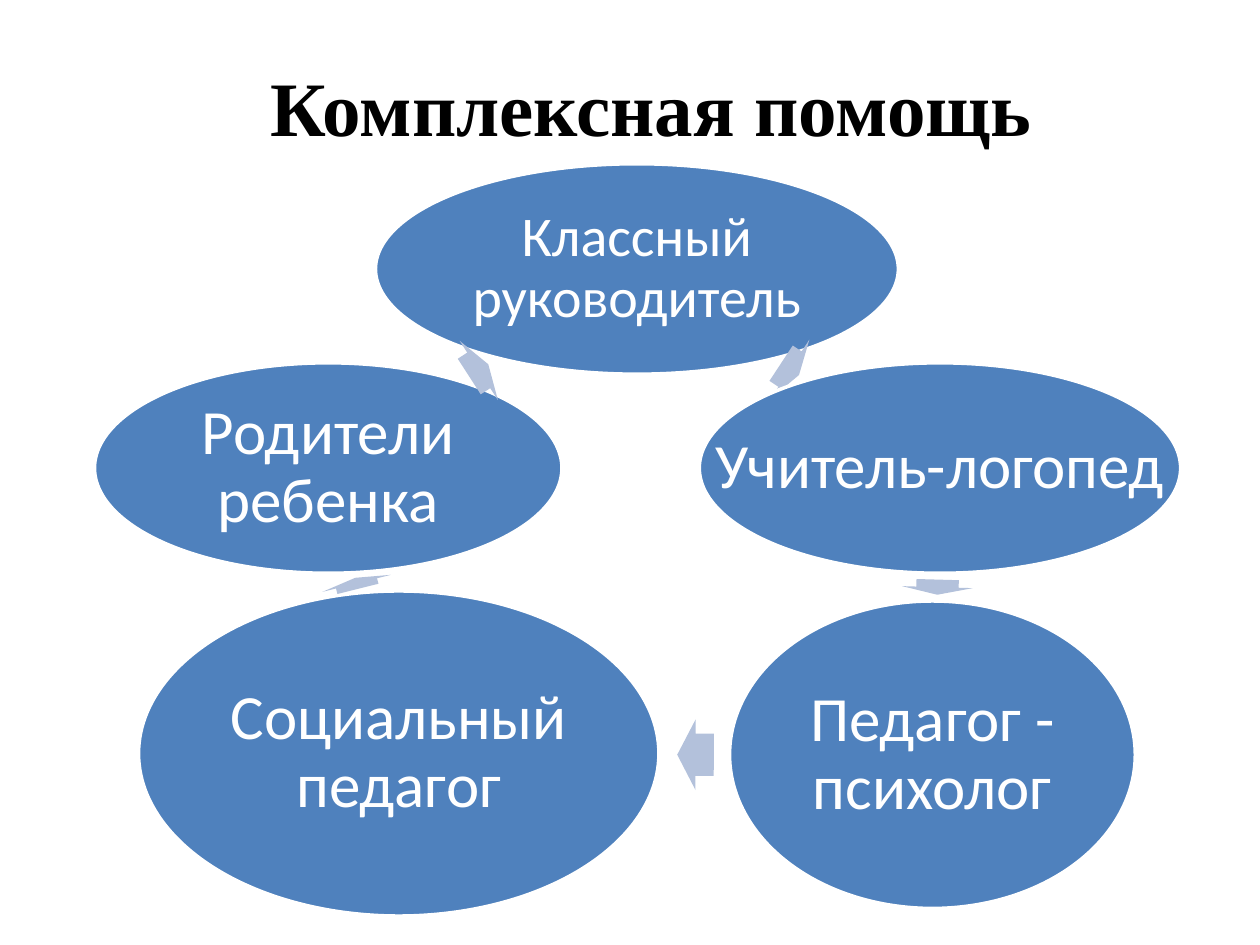
from pptx import Presentation
from pptx.dml.color import RGBColor
from pptx.enum.shapes import MSO_SHAPE
from pptx.enum.text import MSO_ANCHOR, PP_ALIGN
from pptx.util import Inches, Pt

OVAL, ARROW = MSO_SHAPE.OVAL, MSO_SHAPE.RIGHT_ARROW
MIDDLE, CENTER = MSO_ANCHOR.MIDDLE, PP_ALIGN.CENTER


def color(code):
    return RGBColor.from_string(code)


def add_text(slide, box, text, pad, space, style, code):
    frame = slide.shapes.add_textbox(*map(Inches, box)).text_frame
    form = {"word_wrap": True, "vertical_anchor": MIDDLE}
    for side in ("left", "right", "top", "bottom"):
        form["margin_" + side] = Inches(pad)
    for name, value in form.items():
        setattr(frame, name, value)
    para = frame.paragraphs[0]
    para.alignment, para.line_spacing = CENTER, space
    run = para.add_run()
    run.text = text
    for name, value in style.items():
        setattr(run.font, name, value)
    run.font.color.rgb = color(code)


deck = Presentation()
deck.slide_width, deck.slide_height = Inches(10), Inches(7.5)
slide = deck.slides.add_slide(deck.slide_layouts[6])

# Title
add_text(slide, (0.67, 0.21, 9, 1.25), "Комплексная помощь", 0.05, 1.0,
         {"name": "Times New Roman", "size": Pt(44), "bold": True}, "000000")

# Cycle, clockwise: label, text size, oval box, then the arrow that follows:
# centre x, centre y, length, rotation
steps = [
    ("Классный руководитель", 32, (2.98, 1.3, 4.15, 1.67),
     (6.27, 2.93, 0.17, 33.3)),
    ("Учитель-логопед", 36, (5.55, 2.88, 3.82, 1.67),
     (7.44, 4.66, 0.12, 91.6)),
    ("Педагог - психолог", 36, (5.79, 4.77, 3.22, 2.44),
     (5.52, 5.99, 0.29, 180.1)),
    ("Социальный педагог", 36, (1.1, 4.69, 4.13, 2.58),
     (2.83, 4.63, 0.09, 256)),
    ("Родители ребенка", 36, (0.75, 2.88, 3.71, 1.67),
     (3.8, 2.94, 0.18, 327.1)),
]
tall = 0.56

for label, size, box, (mid_x, mid_y, length, turn) in steps:
    # Oval with its label
    oval = slide.shapes.add_shape(OVAL, *map(Inches, box))
    oval.shadow.inherit = False
    oval.fill.solid()
    oval.fill.fore_color.rgb = color("4F81BD")
    oval.line.color.rgb = color("FFFFFF")
    oval.line.width = Pt(2)
    add_text(slide, box, label, 0.05, 0.9,
             {"name": "Calibri", "size": Pt(size)}, "FFFFFF")

    # Arrow to the next oval
    arrow = slide.shapes.add_shape(
        ARROW, Inches(mid_x - length / 2), Inches(mid_y - tall / 2),
        Inches(length), Inches(tall))
    arrow.shadow.inherit = False
    arrow.adjustments[0], arrow.adjustments[1] = 0.6, 0.5
    arrow.rotation = turn
    arrow.fill.solid()
    arrow.fill.fore_color.rgb = color("B3C1DB")
    arrow.line.fill.background()

deck.save("out.pptx")
